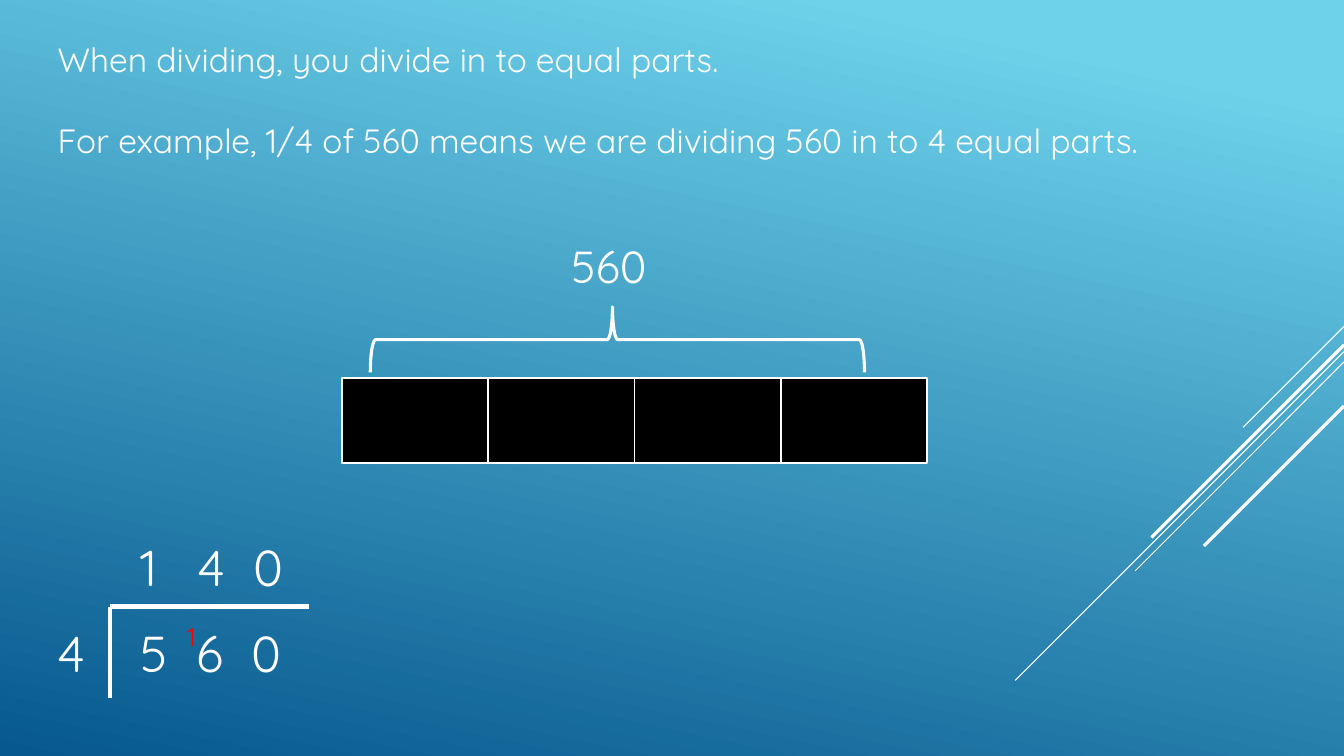
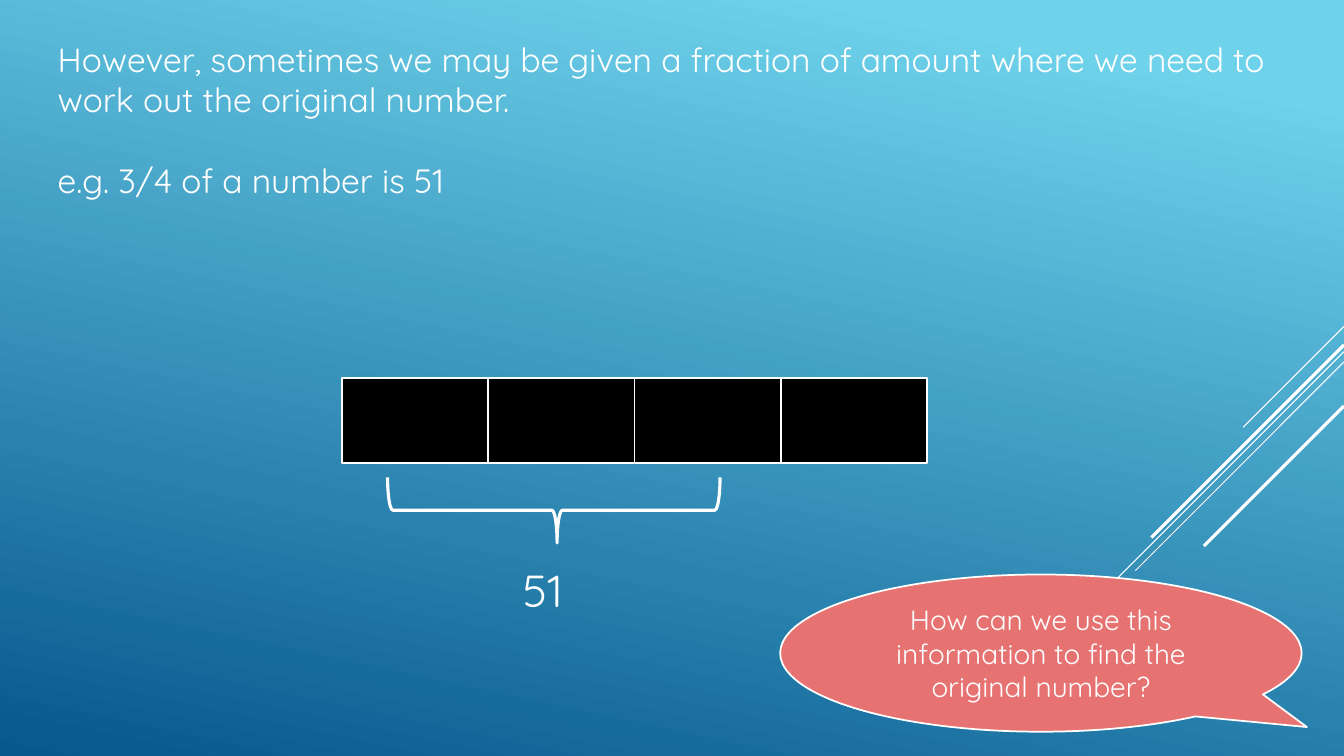
"""Build two slides on dividing into equal parts and finding a whole from a fraction."""
from dataclasses import dataclass

from lxml.etree import SubElement
from pptx import Presentation
from pptx.dml.color import RGBColor
from pptx.enum.shapes import MSO_CONNECTOR, MSO_SHAPE
from pptx.enum.text import MSO_ANCHOR, MSO_AUTO_SIZE, PP_ALIGN
from pptx.oxml.ns import qn
from pptx.shapes.autoshape import Shape
from pptx.shapes.connector import Connector
from pptx.slide import Slide, SlideMaster
from pptx.text.text import TextFrame
from pptx.util import Pt

COLORS = {
    "sky": "6ED2EB",
    "deep": "06588E",
    "white": "FFFFFF",
    "bar": "000000",
    "callout": "E67272",
    "carry": "FF0000",
}
FONT = "Quicksand"
PAGE_WIDTH, PAGE_HEIGHT = 960, 540
INTRO_SIZE, INTRO_GAP = 24, 29
PART_COUNT = 4
BAR_LEFT, BAR_TOP, PART_WIDTH, PART_HEIGHT = 244.2, 270, 104.5, 61
BRACE_DEPTH = 46.8


@dataclass(frozen=True)
class Stroke:
    x1: float
    y1: float
    x2: float
    y2: float
    weight: float


@dataclass(frozen=True)
class Streak:
    top: float
    reach: float
    weight: float


@dataclass(frozen=True)
class Label:
    text: str
    left: float
    top: float
    width: float
    height: float
    size: float
    color: str = "white"


@dataclass(frozen=True)
class Brace:
    center_x: float
    center_y: float
    span: float
    rotation: int


@dataclass(frozen=True)
class DigitRow:
    digits: str
    left: float
    top: float
    pitch: float


STREAKS = (
    Streak(233.2, 72, 0.75),
    Streak(251.2, 234.8, 0.75),
    Streak(258.6, 149, 0.75),
    Streak(246.4, 137.5, 2.25),
    Streak(290, 100, 2.25),
)
DIVISION_FRAME = (
    Stroke(78.5, 433.3, 78.5, 498.3, 3),
    Stroke(78.5, 433.3, 220.5, 433.3, 3),
)
DIGIT_ROWS = (
    DigitRow("140", 93.6, 379.4, 40.3),
    DigitRow("560", 93.6, 440.6, 39.4),
    DigitRow("4", 33.8, 440.6, 0),
)


def rgb(name: str) -> RGBColor:
    return RGBColor.from_string(COLORS[name])


def add_text(frame: TextFrame, texts: tuple[str, ...], size: float, color: str,
             align: PP_ALIGN, gap: float = 0) -> None:
    for index, text in enumerate(texts):
        para = frame.add_paragraph() if index else frame.paragraphs[0]
        para.alignment = align
        para.space_before = Pt(gap if index else 0)
        span = para.add_run()
        span.text = text
        span.font.name = FONT
        span.font.size = Pt(size)
        span.font.color.rgb = rgb(color)


def add_stroke(page: Slide, stroke: Stroke) -> Connector:
    ends = (Pt(value) for value in (stroke.x1, stroke.y1, stroke.x2, stroke.y2))
    connector = page.shapes.add_connector(MSO_CONNECTOR.STRAIGHT, *ends)
    connector.line.color.rgb = rgb("white")
    connector.line.width = Pt(stroke.weight)
    SubElement(connector.element.spPr, qn("a:effectLst"))
    return connector


def add_outlined(page: Slide, kind: MSO_SHAPE, left: float, top: float, width: float,
                 height: float, weight: float, fill: str | None = None) -> Shape:
    shape = page.shapes.add_shape(kind, Pt(left), Pt(top), Pt(width), Pt(height))
    shape.shadow.inherit = False
    if fill:
        shape.fill.solid()
        shape.fill.fore_color.rgb = rgb(fill)
    else:
        shape.fill.background()
    shape.line.color.rgb = rgb("white")
    shape.line.width = Pt(weight)
    return shape


def add_label(page: Slide, label: Label) -> None:
    box = page.shapes.add_textbox(Pt(label.left), Pt(label.top), Pt(label.width), Pt(label.height))
    box.text_frame.word_wrap = True
    add_text(box.text_frame, (label.text,), label.size, label.color, PP_ALIGN.LEFT)


def add_brace(page: Slide, brace: Brace) -> None:
    shape = add_outlined(page, MSO_SHAPE.LEFT_BRACE, brace.center_x - BRACE_DEPTH / 2,
                         brace.center_y - brace.span / 2, BRACE_DEPTH, brace.span, 2.25)
    shape.rotation = brace.rotation
    shape.adjustments[0] = 0.08
    shape.adjustments[1] = 0.51


def add_bar(page: Slide) -> None:
    for index in range(PART_COUNT):
        add_outlined(page, MSO_SHAPE.RECTANGLE, BAR_LEFT + index * PART_WIDTH, BAR_TOP,
                     PART_WIDTH, PART_HEIGHT, 1.25, "bar")


def add_intro(page: Slide, texts: tuple[str, ...], height: float) -> None:
    box = page.shapes.title
    box.left, box.top, box.width, box.height = Pt(34), Pt(24), Pt(911.5), Pt(height)
    frame = box.text_frame
    frame.auto_size = MSO_AUTO_SIZE.NONE
    frame.word_wrap = True
    frame.vertical_anchor = MSO_ANCHOR.TOP
    add_text(frame, texts, INTRO_SIZE, "white", PP_ALIGN.LEFT, INTRO_GAP)


def add_division(page: Slide) -> None:
    for stroke in DIVISION_FRAME:
        add_stroke(page, stroke)
    for row in DIGIT_ROWS:
        for index, digit in enumerate(row.digits):
            add_label(page, Label(digit, row.left + index * row.pitch, row.top, 40, 51, 36))
    add_label(page, Label("1", 126.7, 440.6, 25, 29, 18, "carry"))


def add_callout(page: Slide, text: str) -> None:
    callout = add_outlined(page, MSO_SHAPE.OVAL_CALLOUT, 557.3, 410.4, 372.5, 112.3, 1.25, "callout")
    callout.adjustments[0] = 0.51
    callout.adjustments[1] = 0.47
    frame = callout.text_frame
    frame.word_wrap = True
    frame.vertical_anchor = MSO_ANCHOR.MIDDLE
    add_text(frame, (text,), 20, "white", PP_ALIGN.CENTER)


def style_master(master: SlideMaster, page: Slide) -> None:
    fill = master.background.fill
    fill.gradient()
    fill.gradient_angle = 258
    for stop, position, color in zip(fill.gradient_stops, (0.1, 1), ("sky", "deep")):
        stop.position = position
        stop.color.rgb = rgb(color)
    for index, streak in enumerate(STREAKS):
        stroke = Stroke(PAGE_WIDTH, streak.top, PAGE_WIDTH - streak.reach,
                        streak.top + streak.reach, streak.weight)
        element = add_stroke(page, stroke).element
        element.xpath("./p:nvCxnSpPr/p:cNvPr")[0].set("id", str(100 + index))
        master.shapes.element.append(element)


def main() -> None:
    deck = Presentation()
    deck.slide_width, deck.slide_height = Pt(PAGE_WIDTH), Pt(PAGE_HEIGHT)
    layout = deck.slide_layouts.get_by_name("Title Only")

    dividing = deck.slides.add_slide(layout)
    style_master(deck.slide_master, dividing)
    add_intro(dividing, (
        "When dividing, you divide in to equal parts.",
        "For example, 1/4 of 560 means we are dividing 560 in to 4 equal parts.",
    ), 94.3)
    add_bar(dividing)
    add_brace(dividing, Brace(441, 242.6, 353, 90))
    add_label(dividing, Label("560", 401, 167, 75, 46, 32))
    add_division(dividing)

    finding = deck.slides.add_slide(layout)
    add_intro(finding, (
        "However, sometimes we may be given a fraction of amount where we need to "
        "work out the original number.",
        "e.g. 3/4 of a number is 51",
    ), 123.8)
    add_bar(finding)
    add_brace(finding, Brace(395.6, 364.4, 237.5, 270))
    add_label(finding, Label("51", 366.5, 398.2, 55, 46, 32))
    add_callout(finding, "How can we use this information to find the original number?")

    deck.save("out.pptx")


if __name__ == "__main__":
    main()
